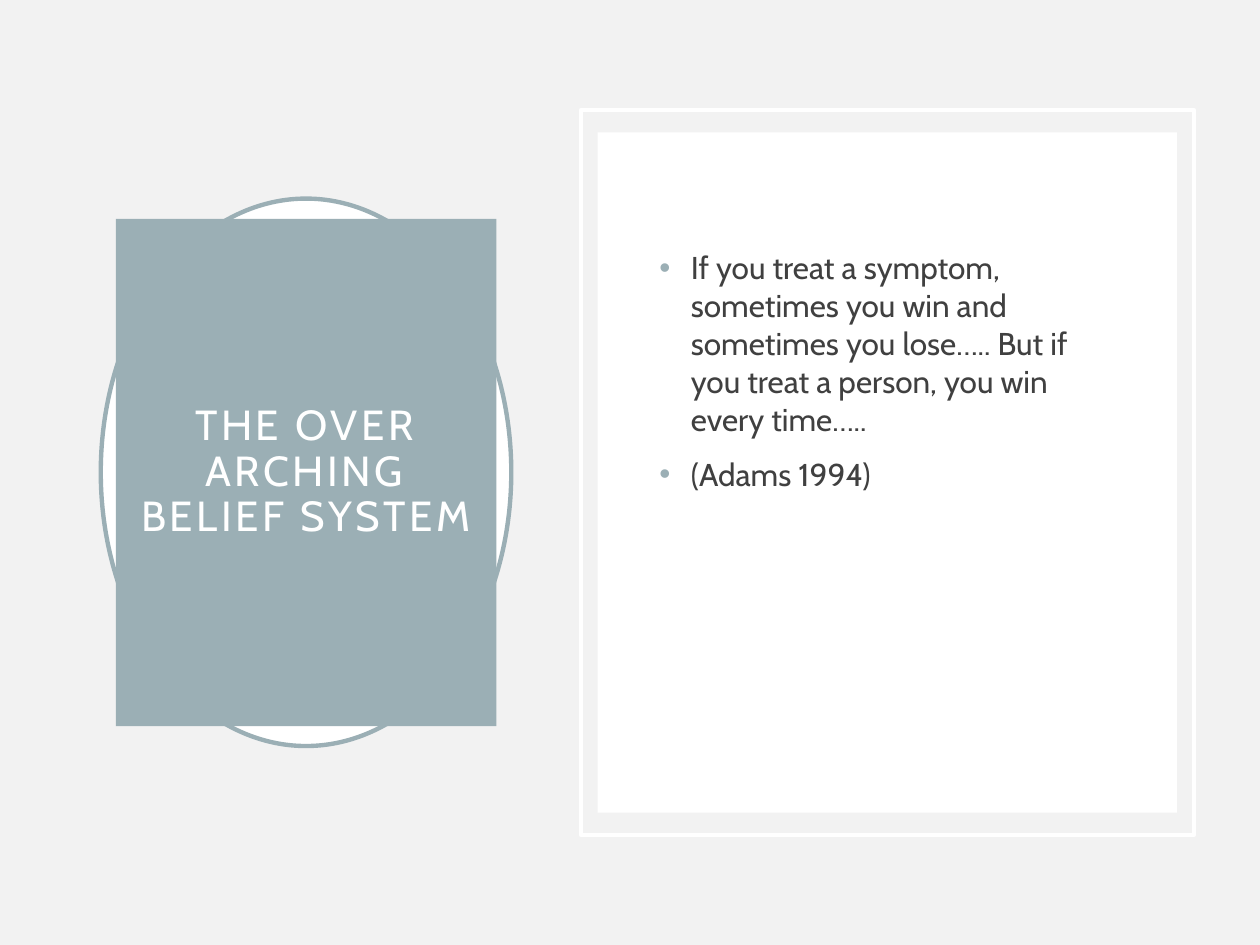
from lxml import etree
from pptx import Presentation
from pptx import util as u
from pptx.dml import color
from pptx.enum import shapes, text
from pptx.oxml import ns

FONT, BLUE, WHITE = "Cabin", "9BAFB5", "FFFFFF"


def rgb(code):
    """Turn a hex string into a colour."""
    return color.RGBColor.from_string(code)


def paint(shape, fill=None, line=None):
    """Set the fill and outline of a shape."""
    if fill:
        shape.fill.solid()
        shape.fill.fore_color.rgb = rgb(fill)
    else:
        shape.fill.background()
    if line:
        shape.line.color.rgb = rgb(line)
        shape.line.width = u.Pt(2.5)
    else:
        shape.line.fill.background()


def panel(slide, kind, box, **look):
    """Add a plain preset shape."""
    shape = slide.shapes.add_shape(kind, *map(u.Pt, box))
    shape.shadow.inherit = False
    paint(shape, **look)


def bullet(para):
    """Give a paragraph a coloured bullet and a hanging indent."""
    props = para._p.get_or_add_pPr()
    props.set("marL", str(u.Pt(18)))
    props.set("indent", str(u.Pt(-18)))
    tint = etree.SubElement(props, ns.qn("a:buClr"))
    etree.SubElement(tint, ns.qn("a:srgbClr"), val=BLUE)
    etree.SubElement(props, ns.qn("a:buFont"), typeface="Arial")
    etree.SubElement(props, ns.qn("a:buChar"), char="•")


def write(frame, lines, size, ink, align=text.PP_ALIGN.LEFT, anchor=text.MSO_ANCHOR.TOP,
          inset=(7.2, 3.6), leading=None, before=0, track=0, dots=False):
    """Fill a text frame with formatted paragraphs."""
    frame.word_wrap = True
    frame.auto_size = text.MSO_AUTO_SIZE.NONE
    frame.vertical_anchor = anchor
    frame.margin_left = frame.margin_right = u.Pt(inset[0])
    frame.margin_top = frame.margin_bottom = u.Pt(inset[1])
    for i, line in enumerate(lines):
        para = frame.add_paragraph() if i else frame.paragraphs[0]
        para.alignment = align
        para.line_spacing = leading
        para.space_before = u.Pt(before)
        if dots:
            bullet(para)
        run = para.add_run()
        run.text = line
        run.font.name, run.font.size = FONT, u.Pt(size)
        run.font.color.rgb = rgb(ink)
        if track:
            run.font._element.set("spc", str(track * 100))


def head(slide, box, line):
    """Place the title block in front of the shapes added so far."""
    title = slide.shapes.title
    title.left, title.top, title.width, title.height = map(u.Pt, box)
    paint(title, fill=BLUE)
    write(title.text_frame, [line], 24, WHITE, align=text.PP_ALIGN.CENTER,
          anchor=text.MSO_ANCHOR.MIDDLE, inset=(10, 14.4), leading=0.9, track=2)
    slide.shapes._spTree.append(title._element)


def main():
    """Build the slide and save it."""
    deck = Presentation()
    deck.slide_width, deck.slide_height = u.Pt(720), u.Pt(540)
    slide = deck.slides.add_slide(deck.slide_layouts[5])
    slide.background.fill.solid()
    slide.background.fill.fore_color.rgb = rgb("F2F2F2")

    kinds = shapes.MSO_SHAPE
    panel(slide, kinds.OVAL, (57.6, 113.5, 234.6, 312.8), fill=WHITE, line=BLUE)
    head(slide, (66.2, 125, 217.5, 290), "THE OVER ARCHING BELIEF SYSTEM")
    panel(slide, kinds.RECTANGLE, (332, 62.8, 350.2, 414.4), line=WHITE)
    panel(slide, kinds.RECTANGLE, (341.5, 75.6, 331, 388.8), fill=WHITE)

    body = slide.shapes.add_textbox(*map(u.Pt, (369.7, 113.5, 275, 312.8)))
    write(body.text_frame, [
        "If you treat a symptom, sometimes you win and sometimes you lose….. "
        "But if you treat a person, you win every time…..",
        "(Adams 1994)",
    ], 18, "404040", inset=(7.2, 28.4), before=10, dots=True)
    deck.save("out.pptx")


if __name__ == "__main__":
    main()
